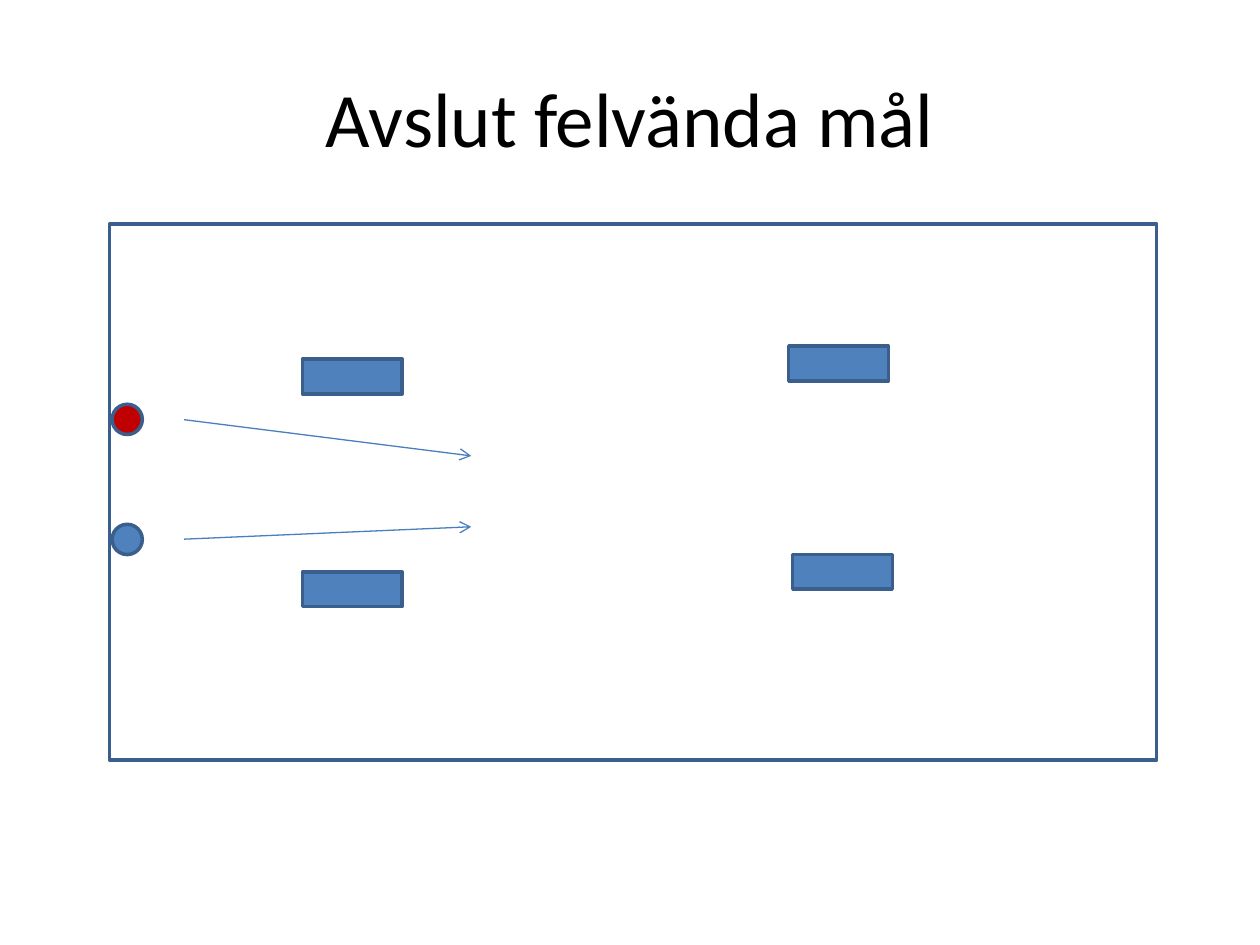
from lxml import etree
from pptx import Presentation
from pptx.dml.color import RGBColor
from pptx.enum.shapes import MSO_CONNECTOR, MSO_SHAPE
from pptx.enum.text import MSO_ANCHOR, PP_ALIGN
from pptx.oxml.ns import qn
from pptx.util import Cm, Pt

COLORS = {
    "text": "000000",
    "blue": "4F81BD",
    "red": "C00000",
    "outline": "3A5F8C",
    "arrow": "4B7EBC",
}


def rgb(name):
    return RGBColor.from_string(COLORS[name])


def add_outlined(kind, x, y, w, h, fill=None):
    """Add a preset shape with the common outline; no fill name leaves it hollow."""
    sp = s.shapes.add_shape(kind, Cm(x), Cm(y), Cm(w), Cm(h))
    sp.shadow.inherit = False
    if fill:
        sp.fill.solid()
        sp.fill.fore_color.rgb = rgb(fill)
    else:
        sp.fill.background()
    sp.line.color.rgb = rgb("outline")
    sp.line.width = Pt(2)


prs = Presentation()
prs.slide_width, prs.slide_height = Cm(25.4), Cm(19.05)
s = prs.slides.add_slide(prs.slide_layouts[5])

# Title
title = s.shapes.title
title.left, title.top, title.width, title.height = Cm(1.27), Cm(0.76), Cm(22.86), Cm(3.18)
tf = title.text_frame
tf.vertical_anchor = MSO_ANCHOR.MIDDLE
p = tf.paragraphs[0]
p.alignment = PP_ALIGN.CENTER
r = p.add_run()
r.text = "Avslut felvända mål"
r.font.name = "Calibri"
r.font.size = Pt(44)
r.font.color.rgb = rgb("text")

# Pitch
add_outlined(MSO_SHAPE.RECTANGLE, 2.21, 4.52, 21.11, 10.8)

# Players
for y, color in [(8.15, "red"), (10.57, "blue")]:
    add_outlined(MSO_SHAPE.OVAL, 2.26, y, 0.61, 0.61, color)

# Goals
for x, y in [(6.1, 7.24), (6.1, 11.53), (15.9, 6.98), (15.98, 11.18)]:
    add_outlined(MSO_SHAPE.RECTANGLE, x, y, 2.01, 0.7, "blue")

# Running paths
for start_y, end_y in [(8.46, 9.19), (10.87, 10.62)]:
    cn = s.shapes.add_connector(
        MSO_CONNECTOR.STRAIGHT, Cm(3.71), Cm(start_y), Cm(9.5), Cm(end_y))
    cn.line.color.rgb = rgb("arrow")
    cn.line.width = Pt(0.75)
    etree.SubElement(cn.line._get_or_add_ln(), qn("a:tailEnd"), type="arrow")
    etree.SubElement(cn._element.spPr, qn("a:effectLst"))

prs.save("out.pptx")
